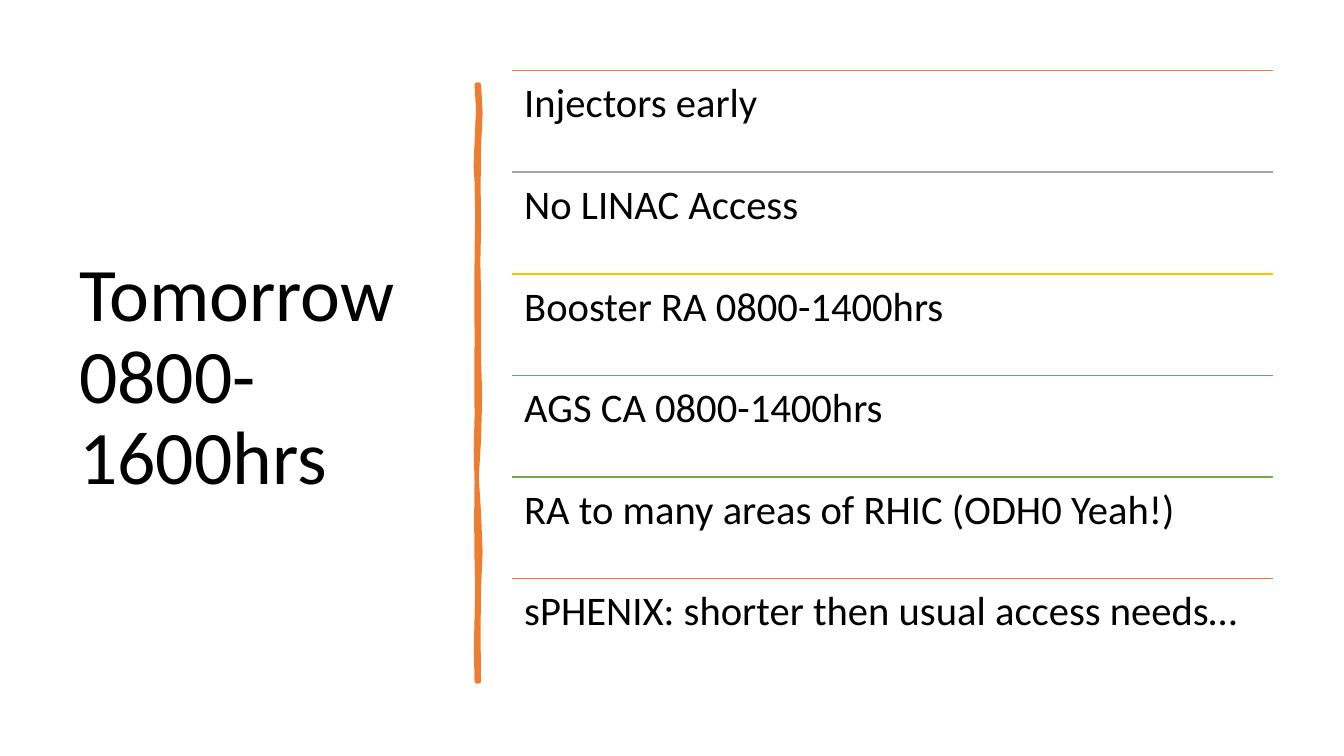
"""Build the slide listing tomorrow's access plan."""
from lxml import etree
from pptx import Presentation
from pptx.dml.color import RGBColor
from pptx.enum.shapes import MSO_CONNECTOR
from pptx.enum.text import MSO_ANCHOR
from pptx.oxml.ns import qn
from pptx.util import Pt

STRAIGHT = MSO_CONNECTOR.STRAIGHT
TOP, MIDDLE = MSO_ANCHOR.TOP, MSO_ANCHOR.MIDDLE

HEADING = "Tomorrow 0800-1600hrs"
PLANS = [
    ("Injectors early", "orange"),
    ("No LINAC Access", "gray"),
    ("Booster RA 0800-1400hrs", "gold"),
    ("AGS CA 0800-1400hrs", "blue"),
    ("RA to many areas of RHIC (ODH0 Yeah!)", "green"),
    ("sPHENIX: shorter then usual access needs…", "orange"),
]
THEME = {
    "font": "Calibri", "heading_size": 54, "plan_size": 29,
    "rule_width": 1, "divider_width": 3.25,
    "text": "000000", "orange": "ED7D31", "gray": "A5A5A5",
    "gold": "FFC000", "blue": "5B9BD5", "green": "70AD47",
}
HEADING_BOX = (49.7, 50.4, 269.3, 439.9)
PLAN_LEFT, PLAN_TOP, PLAN_WIDTH, PLAN_PITCH = 365.8, 50.4, 543.6, 72.6
HEADING_INSETS = (7.2, 3.6, 7.2, 3.6)
PLAN_INSETS = (8.64,) * 4
DIVIDER_RIGHT = [
    (342, 60.5), (343.1, 80.5), (342, 105), (341.7, 133), (342, 163),
    (341.5, 187), (342, 212), (342.1, 234), (342, 256), (342.8, 283),
    (342, 314), (340.4, 341), (342, 367), (343.1, 394), (342, 420.5),
    (341.6, 452), (342, 486.7),
]
DIVIDER_LEFT = [
    (340.6, 486.7), (340.1, 463), (340.6, 441.4), (341.1, 421), (340.6, 401),
    (340.3, 372), (340.6, 343.4), (340, 321), (340.6, 298.8), (340.5, 270),
    (340.6, 241), (340.5, 210), (340.6, 180), (341.1, 155), (340.6, 130),
    (339.9, 118), (341.6, 78), (340.6, 60.5),
]
UNITS_PER_POINT = 100


def color(name):
    return RGBColor.from_string(THEME[name])


def add_text(slide, words, box, size, insets, anchor):
    frame = slide.shapes.add_textbox(*map(Pt, box)).text_frame
    sides = ("margin_left", "margin_top", "margin_right", "margin_bottom")
    formats = {"word_wrap": True, "vertical_anchor": anchor,
               **dict(zip(sides, map(Pt, insets)))}
    for key, value in formats.items():
        setattr(frame, key, value)
    paragraph = frame.paragraphs[0]
    paragraph.text = words
    paragraph.line_spacing = 0.9
    for key, value in {"name": THEME["font"], "size": Pt(size)}.items():
        setattr(paragraph.font, key, value)
    paragraph.font.color.rgb = color("text")


def add_divider(slide):
    outline = [(x * UNITS_PER_POINT, y * UNITS_PER_POINT)
               for x, y in DIVIDER_RIGHT + DIVIDER_LEFT]
    builder = slide.shapes.build_freeform(*outline[0], scale=Pt(1) / UNITS_PER_POINT)
    builder.add_line_segments(outline[1:], close=True)
    divider = builder.convert_to_shape()
    divider.shadow.inherit = False
    divider.fill.solid()
    divider.fill.fore_color.rgb = color("orange")
    divider.line.color.rgb = color("orange")
    divider.line.width = Pt(THEME["divider_width"])
    etree.SubElement(divider.line._get_or_add_ln(), qn("a:round"))


def add_rule(slide, top, color_name):
    rule = slide.shapes.add_connector(
        STRAIGHT, Pt(PLAN_LEFT), Pt(top), Pt(PLAN_LEFT + PLAN_WIDTH), Pt(top))
    rule.line.color.rgb = color(color_name)
    rule.line.width = Pt(THEME["rule_width"])
    etree.SubElement(rule._element.spPr, qn("a:effectLst"))


def main():
    deck = Presentation()
    deck.slide_width, deck.slide_height = Pt(960), Pt(540)
    slide = deck.slides.add_slide(deck.slide_layouts[6])
    add_text(slide, HEADING, HEADING_BOX, THEME["heading_size"], HEADING_INSETS, MIDDLE)
    add_divider(slide)
    for row, (plan, color_name) in enumerate(PLANS):
        top = PLAN_TOP + row * PLAN_PITCH
        add_rule(slide, top, color_name)
        add_text(slide, plan, (PLAN_LEFT, top, PLAN_WIDTH, PLAN_PITCH),
                 THEME["plan_size"], PLAN_INSETS, TOP)
    deck.save("out.pptx")


if __name__ == "__main__":
    main()
